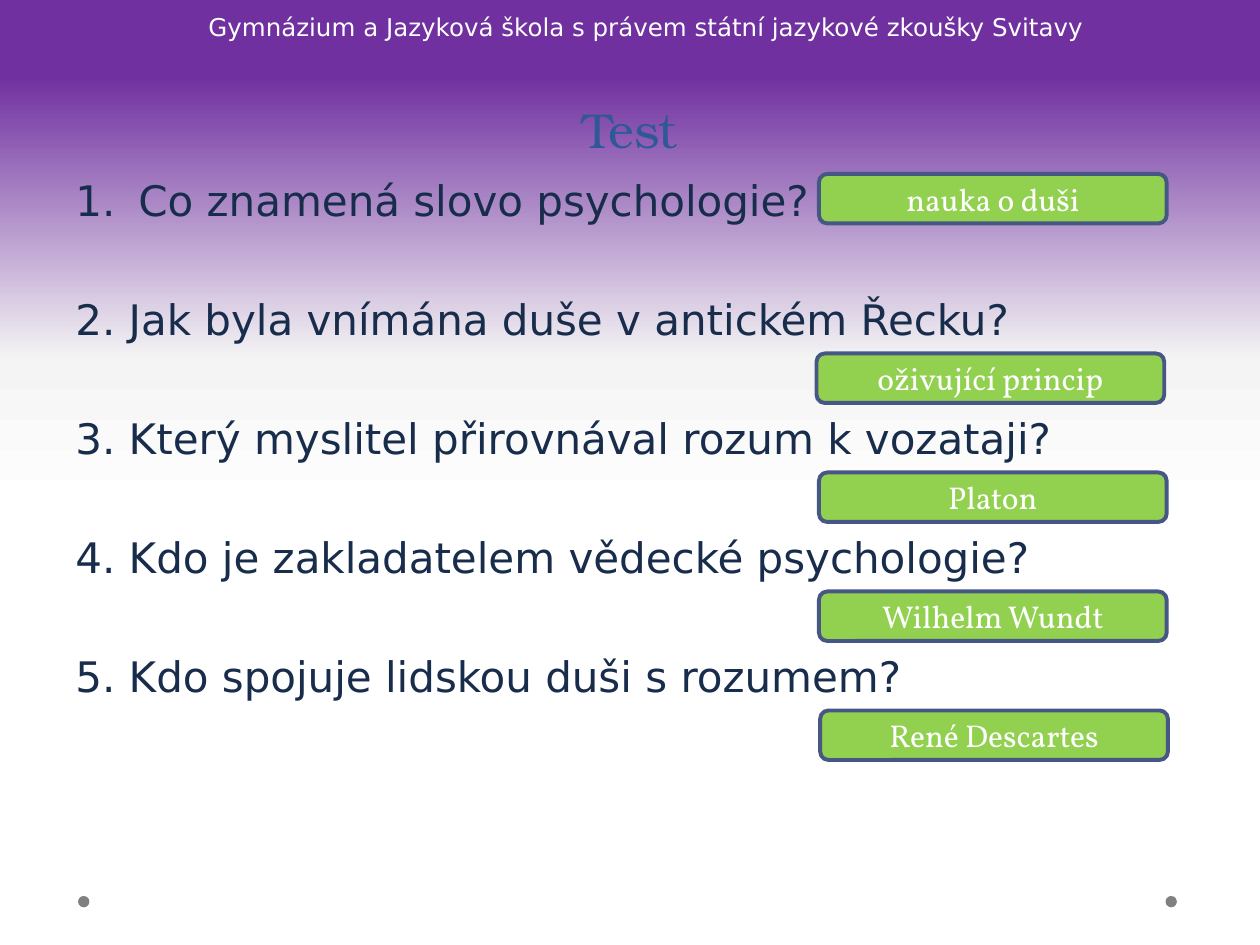
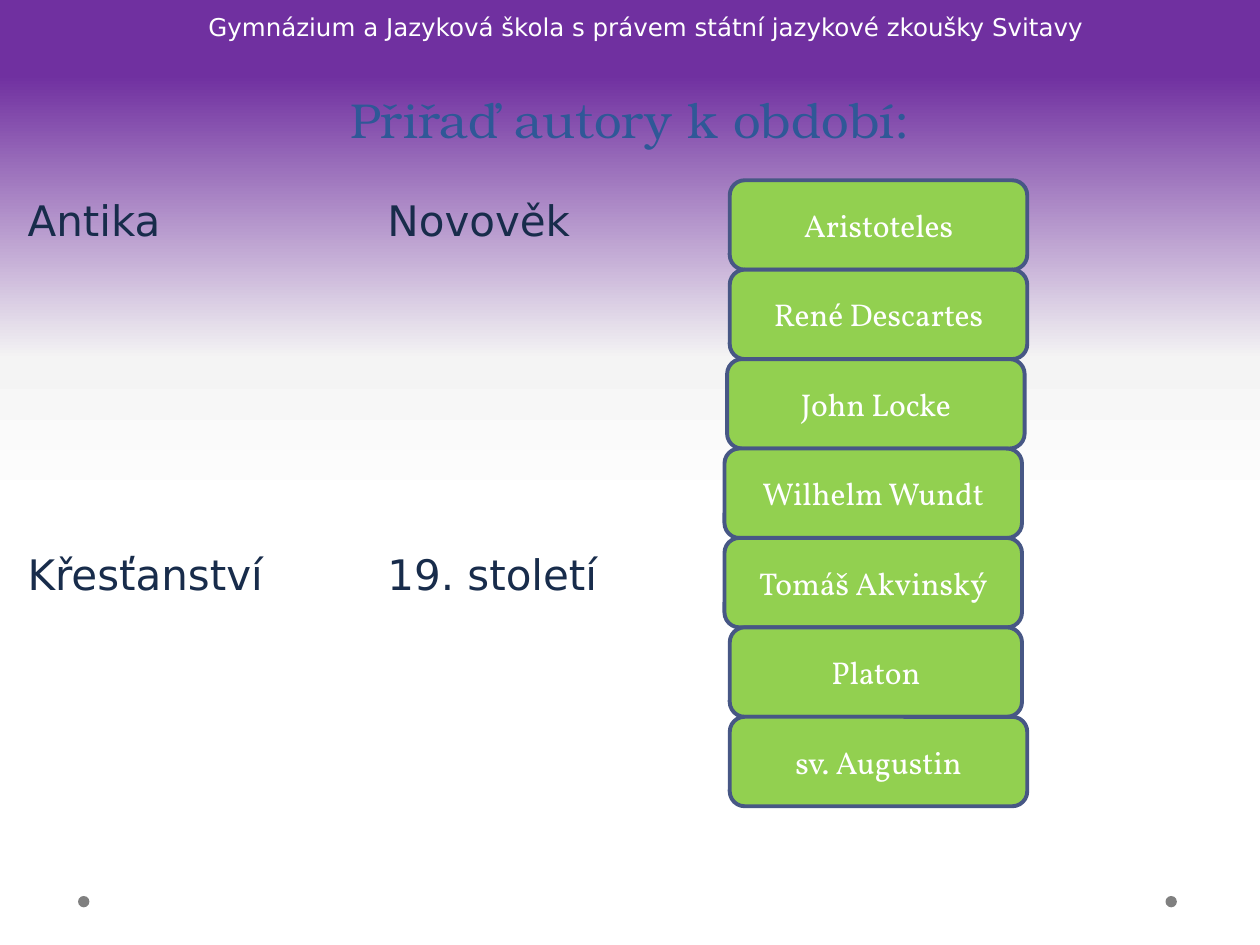
from lxml import etree
from pptx import Presentation
from pptx.dml.color import RGBColor
from pptx.enum.shapes import MSO_SHAPE
from pptx.enum.text import MSO_ANCHOR, MSO_AUTO_SIZE, PP_ALIGN
from pptx.oxml.ns import qn
from pptx.util import Pt

ROUNDED, OVAL = MSO_SHAPE.ROUNDED_RECTANGLE, MSO_SHAPE.OVAL
MIDDLE, BOTTOM = MSO_ANCHOR.MIDDLE, MSO_ANCHOR.BOTTOM
GROW = MSO_AUTO_SIZE.SHAPE_TO_FIT_TEXT
CENTER, LEFT = PP_ALIGN.CENTER, PP_ALIGN.LEFT
TITLE_ONLY = 5

COLORS = {
    "white": "FFFFFF", "mist": "F4F4F4", "purple": "7030A0", "dot": "808080",
    "title": "2F5897", "text": "182C4B", "card": "92D050", "outline": "475785",
}
BODY_FONT, TITLE_FONT, CARD_FONT = "DejaVu Sans", "TeX Gyre Bonum", "Vollkorn"
SCHOOL = "Gymnázium a Jazyková škola s právem státní jazykové zkoušky Svitavy"

LINE = 33.56        # pitch of body lines
LINE_HEIGHT = 27.94  # height of one 24 pt line

QUESTIONS = [
    "Co znamená slovo psychologie?",
    "2. Jak byla vnímána duše v antickém Řecku?",
    "3. Který myslitel přirovnával rozum k vozataji?",
    "4. Kdo je zakladatelem vědecké psychologie?",
    "5. Kdo spojuje lidskou duši s rozumem?",
]
FIRST_ANSWER = "nauka o duši"
LATER_ANSWERS = [("oživující princip", 466.6), ("Platon", 468),
                 ("Wilhelm Wundt", 468), ("René Descartes", 468.7)]
PERIODS = [["Antika", "Křesťanství"], ["Novověk", "19. století"]]
AUTHORS = [  # name, left, width
    ("Aristoteles", 417, 170), ("René Descartes", 417, 170),
    ("John Locke", 415.5, 170), ("Wilhelm Wundt", 414, 170),
    ("Tomáš Akvinský", 414, 170), ("Platon", 417, 167),
    ("sv. Augustin", 417, 170),
]


def rgb(name):
    return RGBColor.from_string(COLORS[name])


def add_run(p, text, font, size, color, align=LEFT):
    p.alignment = align
    r = p.add_run()
    r.text = text
    r.font.name, r.font.size = font, Pt(size)
    r.font.color.rgb = rgb(color)


def set_background(master):
    """Give the master a gradient that runs from white below to purple on top."""
    fill = master.background.fill
    fill.gradient()
    fill.gradient_angle = 90
    stops = master.element.find(".//" + qn("a:gsLst"))
    for gs in list(stops):
        stops.remove(gs)
    for percent, color in [(46, "white"), (62, "mist"), (92, "purple")]:
        gs = etree.SubElement(stops, qn("a:gs"), pos=str(percent * 1000))
        etree.SubElement(gs, qn("a:srgbClr"), val=COLORS[color])


def add_filled(slide, preset, left, top, width, height, fill):
    sp = slide.shapes.add_shape(preset, Pt(left), Pt(top), Pt(width), Pt(height))
    sp.shadow.inherit = False
    sp.fill.solid()
    sp.fill.fore_color.rgb = rgb(fill)
    sp.line.fill.background()
    return sp


def add_card(slide, text, left, top, width, height):
    sp = add_filled(slide, ROUNDED, left, top, width, height, "card")
    sp.line.color.rgb = rgb("outline")
    sp.line.width = Pt(2.25)
    tf = sp.text_frame
    tf.word_wrap = True
    tf.vertical_anchor = MIDDLE
    add_run(tf.paragraphs[0], text, CARD_FONT, 18, "white", CENTER)


def add_body(slide, lines, left, top, width, height, pitch):
    """Add body text whose paragraphs start pitch points apart."""
    sp = slide.shapes.add_textbox(Pt(left), Pt(top), Pt(width), Pt(height))
    tf = sp.text_frame
    tf.word_wrap = True
    for i, line in enumerate(lines):
        p = tf.add_paragraph() if i else tf.paragraphs[0]
        if i:
            p.space_before = Pt(pitch - LINE_HEIGHT)
        add_run(p, line, BODY_FONT, 24, "text")
    return tf


def number_paragraph(p):
    pPr = p._p.get_or_add_pPr()
    pPr.set("marL", str(Pt(36)))
    pPr.set("indent", str(-Pt(36)))
    etree.SubElement(pPr, qn("a:buFont"), typeface="+mj-lt")
    etree.SubElement(pPr, qn("a:buAutoNum"), type="arabicPeriod")


def add_slide(prs, title, title_height):
    """Add a slide with its title, the school's name and the two dots."""
    slide = prs.slides.add_slide(prs.slide_layouts[TITLE_ONLY])
    for left in (666, 44.6):
        add_filled(slide, OVAL, left, 512, 6.5, 6.5, "dot")

    header = slide.shapes.add_textbox(Pt(106.5), Pt(3.6), Pt(525.6), Pt(24.2))
    tf = header.text_frame
    tf.word_wrap = False
    tf.auto_size = GROW
    add_run(tf.paragraphs[0], SCHOOL, BODY_FONT, 14, "white", CENTER)

    sp = slide.shapes.title
    sp.left, sp.top, sp.width, sp.height = Pt(36), Pt(28), Pt(648), Pt(title_height)
    tf = sp.text_frame
    tf.vertical_anchor = BOTTOM
    p = tf.paragraphs[0]
    p.line_spacing = Pt(58)
    add_run(p, title, TITLE_FONT, 28, "title", CENTER)
    return slide


def build_test(prs):
    slide = add_slide(prs, "Test", 66.2)
    tf = add_body(slide, QUESTIONS, 36, 96.3, 647, 380, 2 * LINE)
    number_paragraph(tf.paragraphs[0])
    add_card(slide, FIRST_ANSWER, 468, 99.4, 198.7, 28.3)
    for i, (answer, left) in enumerate(LATER_ANSWERS):
        add_card(slide, answer, left, 202 + 68 * i, 198.7, 28.3)


def build_matching(prs):
    slide = add_slide(prs, "Přiřaď autory k období:", 60.5)
    for i, periods in enumerate(PERIODS):
        add_body(slide, periods, 8.7 + 205.6 * i, 107.8, 205.6, 357, 6 * LINE)
    for i, (author, left, width) in enumerate(AUTHORS):
        add_card(slide, author, left, 103 + 51.1 * i, width, 51.1)


def main():
    prs = Presentation()
    prs.slide_width, prs.slide_height = Pt(720), Pt(540)
    set_background(prs.slide_master)
    build_test(prs)
    build_matching(prs)
    prs.save("out.pptx")


if __name__ == "__main__":
    main()
